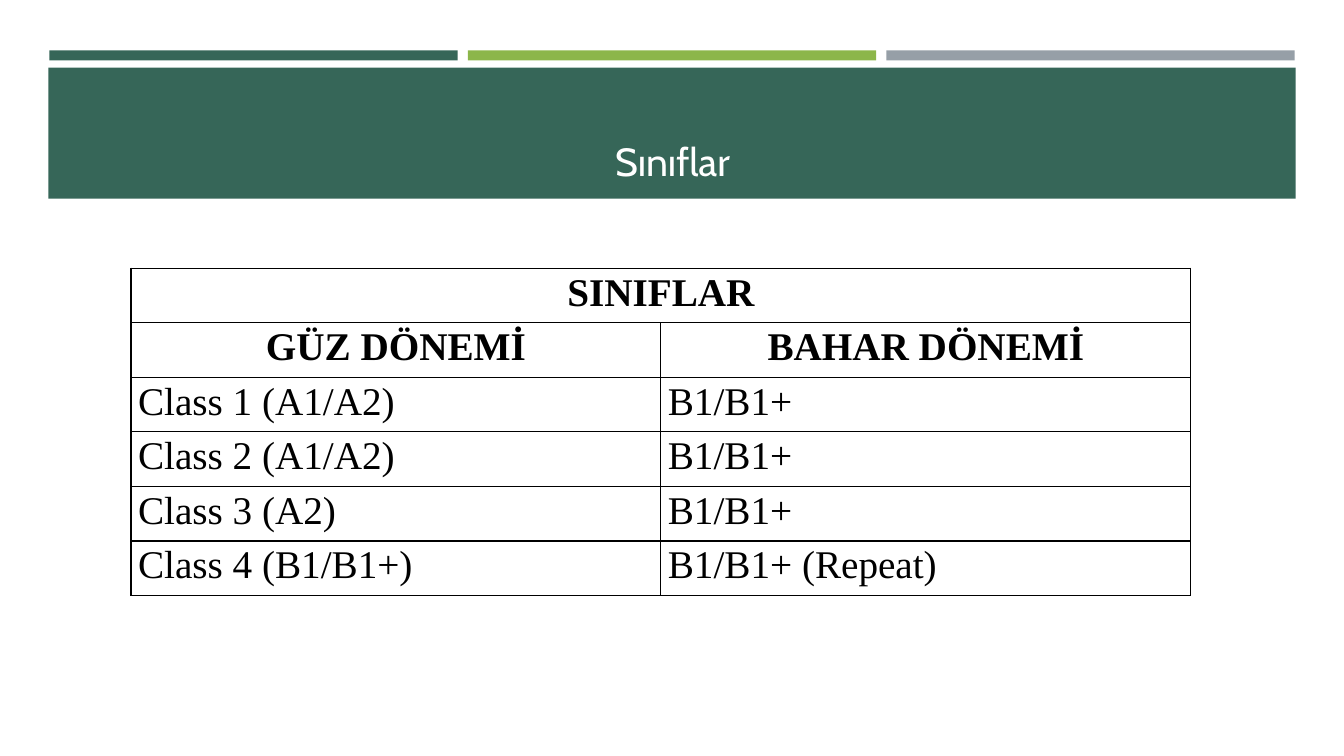
from lxml.etree import SubElement
from pptx import Presentation
from pptx.dml.color import RGBColor
from pptx.enum.shapes import MSO_SHAPE as Preset
from pptx.enum.text import MSO_ANCHOR as Anchor, MSO_AUTO_SIZE as AutoSize, PP_ALIGN as Align
from pptx.oxml.ns import qn
from pptx.util import Inches, Pt

COLORS = {"green": "366658", "lime": "8CB64A", "gray": "969FA7",
          "white": "FFFFFF", "black": "000000"}
HEADINGS = ("GÜZ DÖNEMİ", "BAHAR DÖNEMİ")
CLASSES = (
    ("Class 1 (A1/A2)", "B1/B1+"),
    ("Class 2 (A1/A2)", "B1/B1+"),
    ("Class 3 (A2)", "B1/B1+"),
    ("Class 4 (B1/B1+)", "B1/B1+ (Repeat)"),
)


def format_text(paragraph, font_name, color, align, bold=False):
    """Align a paragraph and style its runs."""
    paragraph.alignment = align
    for run in paragraph.runs:
        run.font.name = font_name
        run.font.size = Pt(28)
        run.font.bold = bold
        run.font.color.rgb = RGBColor.from_string(COLORS[color])


def add_block(slide, left, top, width, height, color):
    """Add a plain filled rectangle."""
    block = slide.shapes.add_shape(
        Preset.RECTANGLE, Inches(left), Inches(top), Inches(width), Inches(height))
    block.shadow.inherit = False
    block.fill.solid()
    block.fill.fore_color.rgb = RGBColor.from_string(COLORS[color])
    block.line.fill.background()


def add_accent_bars(slide, left, top, width, height):
    """Spread three coloured bars evenly across the box."""
    gap = 0.1
    bar_width = (width - 2 * gap) / 3
    for index, color in enumerate(("green", "lime", "gray")):
        add_block(slide, left + index * (bar_width + gap), top, bar_width, height, color)


def add_title_band(slide, left, top, width, height):
    """Draw the title band and set the title inside it."""
    add_block(slide, left, top, width, height, "green")
    title = slide.shapes.title
    slide.shapes._spTree.append(title._element)
    title.left, title.top = Inches(left + 0.16), Inches(top + 0.1)
    title.width, title.height = Inches(width - 0.31), Inches(height - 0.19)
    frame = title.text_frame
    frame.text = "Sınıflar"
    frame.auto_size = AutoSize.NONE
    frame.vertical_anchor = Anchor.BOTTOM
    format_text(frame.paragraphs[0], "Cabin", "white", Align.CENTER)


def add_borders(cell):
    """Give all four sides of a cell a thin black line."""
    properties = cell._tc.get_or_add_tcPr()
    for side in ("lnL", "lnR", "lnT", "lnB"):
        line = SubElement(properties, qn(f"a:{side}"), w=str(Pt(1)))
        SubElement(SubElement(line, qn("a:solidFill")), qn("a:srgbClr"), val=COLORS["black"])


def add_class_table(slide, left, top, width, height):
    """Add the table of classes by term."""
    rows = (("SINIFLAR", ""), HEADINGS, *CLASSES)
    table = slide.shapes.add_table(
        len(rows), 2, Inches(left), Inches(top), Inches(width), Inches(height)).table
    table.first_row = table.horz_banding = False
    table.cell(0, 0).merge(table.cell(0, 1))
    for row_index, row in enumerate(rows):
        heading = row_index < 2
        for column_index, text in enumerate(row):
            cell = table.cell(row_index, column_index)
            add_borders(cell)
            cell.fill.background()
            cell.margin_left = cell.margin_right = Inches(0.07)
            cell.margin_top = cell.margin_bottom = 0
            cell.text_frame.text = text
            paragraph = cell.text_frame.paragraphs[0]
            paragraph.line_spacing = 1.07
            format_text(paragraph, "Times New Roman", "black",
                        Align.CENTER if heading else Align.LEFT, heading)


def main():
    """Build and save the slide."""
    presentation = Presentation()
    presentation.slide_width, presentation.slide_height = Inches(13.33), Inches(7.5)
    slide = presentation.slides.add_slide(presentation.slide_layouts[5])
    add_accent_bars(slide, 0.49, 0.5, 12.35, 0.1)
    add_title_band(slide, 0.48, 0.67, 12.37, 1.3)
    add_class_table(slide, 1.3, 2.66, 10.51, 3.25)
    presentation.save("out.pptx")


if __name__ == "__main__":
    main()
